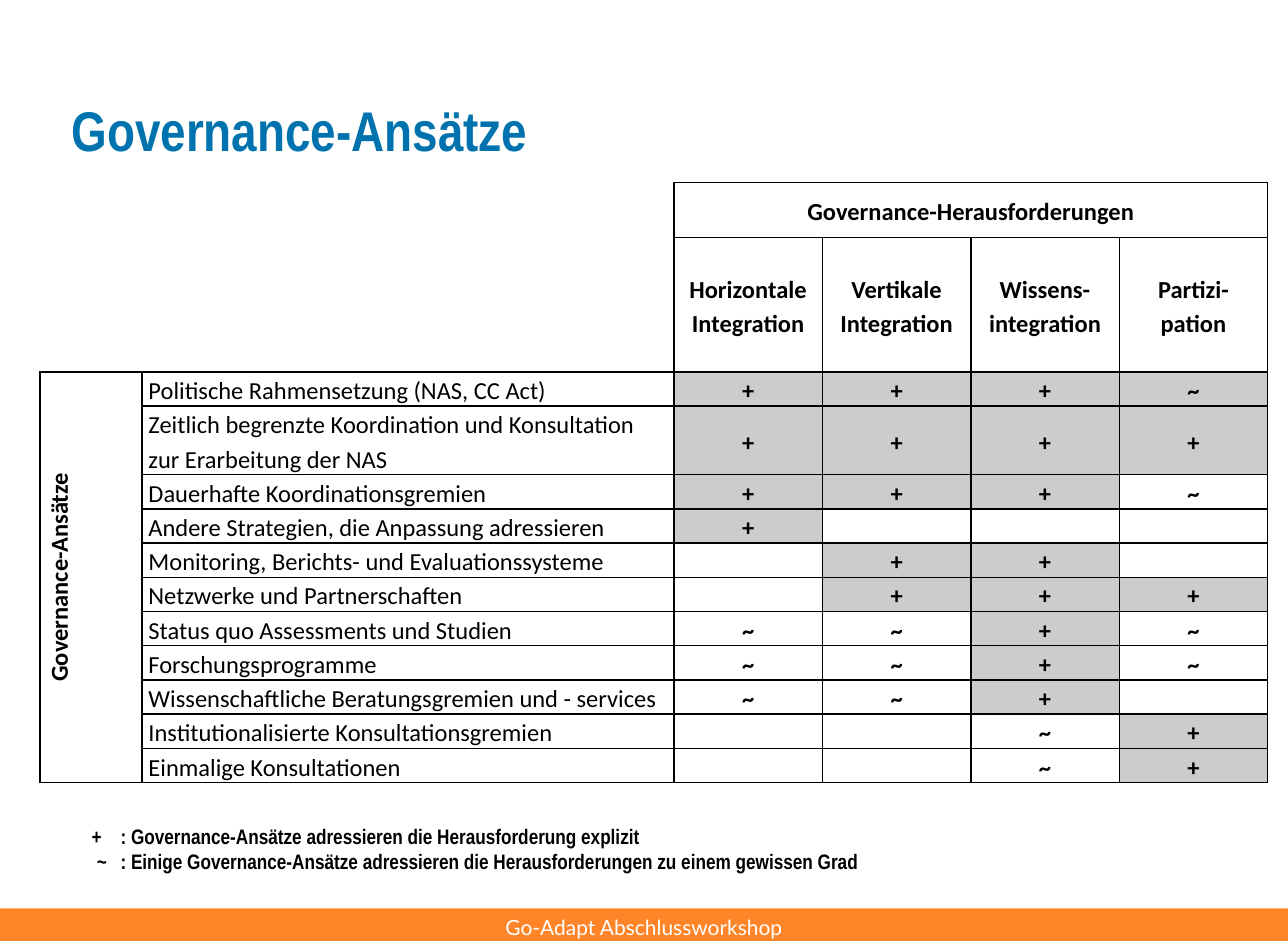
from dataclasses import dataclass

from lxml import etree
from pptx import Presentation
from pptx import util as u
from pptx.dml.color import RGBColor
from pptx.enum import shapes, text
from pptx.oxml import ns


@dataclass(frozen=True)
class Theme:
    blue: str = "0073AF"
    orange: str = "FF8528"
    grey: str = "CCCCCC"
    black: str = "000000"
    white: str = "FFFFFF"
    heading_font: str = "Arial Narrow"
    table_font: str = "Calibri"
    footer_font: str = "Lato"
    title_size: int = 32
    table_size: int = 14
    small_size: int = 12
    line_spacing: float = 1.15


CENTER, LEFT = text.PP_ALIGN.CENTER, text.PP_ALIGN.LEFT
MIDDLE, TOP = text.MSO_ANCHOR.MIDDLE, text.MSO_ANCHOR.TOP

CHALLENGES = ["Horizontale\nIntegration", "Vertikale\nIntegration",
              "Wissens- integration", "Partizi-pation"]
# One mark per challenge; a dot leaves the cell empty.
APPROACHES = [
    ("Politische Rahmensetzung (NAS, CC Act)", "+++~"),
    ("Zeitlich begrenzte Koordination und Konsultation zur Erarbeitung der NAS", "++++"),
    ("Dauerhafte Koordinationsgremien", "+++~"),
    ("Andere Strategien, die Anpassung adressieren", "+..."),
    ("Monitoring, Berichts- und Evaluationssysteme", ".++."),
    ("Netzwerke und Partnerschaften", ".+++"),
    ("Status quo Assessments und Studien", "~~+~"),
    ("Forschungsprogramme", "~~+~"),
    ("Wissenschaftliche Beratungsgremien und - services", "~~+."),
    ("Institutionalisierte Konsultationsgremien", "..~+"),
    ("Einmalige Konsultationen", "..~+"),
]
LEGEND = [
    ("+\t: Governance-Ansätze adressieren die Herausforderung explizit", 0),
    ("~\t: Einige Governance-Ansätze adressieren die Herausforderungen "
     "zu einem gewissen Grad", 3),
]
LEGEND_TAB = 16.5
HEADER_ROWS, LABEL_COLUMNS = 2, 2
COLUMN_WIDTHS = [58.4, 304.4] + [85] * len(CHALLENGES)
HEADER_HEIGHTS, LINE_HEIGHT = [31.5, 77], 19.6


def write(para, content, *, font, size, color, bold=False, align=LEFT, spacing=None):
    para.alignment = align
    if spacing:
        para.line_spacing = spacing
    if not content:
        # The end mark keeps an empty cell as low as a filled one.
        end = etree.SubElement(para._p, ns.qn("a:endParaRPr"))
        end.set("sz", str(size * 100))
        return
    span = para.add_run()
    span.text = content
    span.font.name, span.font.size, span.font.bold = font, u.Pt(size), bold
    span.font.color.rgb = RGBColor.from_string(color)


def draw_borders(cell, sides, color):
    properties = cell._tc.get_or_add_tcPr()
    for side in "LRTB":
        line = etree.SubElement(properties, ns.qn(f"a:ln{side}"), w=str(u.Pt(1)))
        if side in sides:
            fill = etree.SubElement(line, ns.qn("a:solidFill"))
            etree.SubElement(fill, ns.qn("a:srgbClr"), val=color)
        else:
            etree.SubElement(line, ns.qn("a:noFill"))


class SlideBuilder:
    def __init__(self, page, theme):
        self.page, self.theme = page, theme

    def text_box(self, left, top, width, height, anchor=TOP):
        box = self.page.shapes.add_textbox(*map(u.Pt, (left, top, width, height)))
        box.text_frame.word_wrap = True
        box.text_frame.vertical_anchor = anchor
        return box.text_frame

    def title(self, content):
        frame = self.text_box(33.8, 36.7, 663, 74.2, MIDDLE)
        write(frame.paragraphs[0], content, font=self.theme.heading_font,
              size=self.theme.title_size, color=self.theme.blue, bold=True)

    def footer(self, content):
        bar = self.page.shapes.add_shape(
            shapes.MSO_SHAPE.RECTANGLE, 0, u.Pt(520), u.Pt(737.3), u.Pt(21.6))
        bar.shadow.inherit = False
        bar.fill.solid()
        bar.fill.fore_color.rgb = RGBColor.from_string(self.theme.orange)
        bar.line.fill.background()
        write(bar.text_frame.paragraphs[0], content, font=self.theme.footer_font,
              size=self.theme.small_size, color=self.theme.white, align=CENTER)

    def legend(self, entries):
        frame = self.text_box(45.4, 468, 617.8, 70)
        for index, (content, inset) in enumerate(entries):
            para = frame.add_paragraph() if index else frame.paragraphs[0]
            layout = para._p.get_or_add_pPr()
            layout.set("marL", str(u.Pt(LEGEND_TAB)))
            layout.set("indent", str(u.Pt(inset - LEGEND_TAB)))
            write(para, content, font=self.theme.heading_font,
                  size=self.theme.small_size, color=self.theme.black, bold=True)

    def cell(self, cell, content, *, sides, bold=True, align=CENTER, anchor=MIDDLE):
        cell.margin_left = cell.margin_right = u.Pt(3.6)
        cell.margin_top = cell.margin_bottom = 0
        cell.vertical_anchor = anchor
        draw_borders(cell, sides, self.theme.black)
        if content == "+":
            cell.fill.solid()
            cell.fill.fore_color.rgb = RGBColor.from_string(self.theme.grey)
        else:
            cell.fill.background()
        frame = cell.text_frame
        for index, line in enumerate(content.split("\n")):
            para = frame.add_paragraph() if index else frame.paragraphs[0]
            write(para, line, font=self.theme.table_font, size=self.theme.table_size,
                  color=self.theme.black, bold=bold, align=align,
                  spacing=self.theme.line_spacing)

    def matrix(self, left, top):
        heights = HEADER_HEIGHTS + [LINE_HEIGHT * (2 if len(label) > 60 else 1)
                                    for label, _ in APPROACHES]
        table = self.page.shapes.add_table(
            len(heights), len(COLUMN_WIDTHS), u.Pt(left), u.Pt(top),
            u.Pt(sum(COLUMN_WIDTHS)), u.Pt(sum(heights))).table
        table.first_row = table.horz_banding = False
        for column, width in zip(table.columns, COLUMN_WIDTHS):
            column.width = u.Pt(width)
        for row, height in zip(table.rows, heights):
            row.height = u.Pt(height)

        contents = [["", "", "Governance-Herausforderungen", "", "", ""],
                    ["", "", *CHALLENGES]]
        contents += [["", label, *marks.replace(".", " ")] for label, marks in APPROACHES]
        contents[HEADER_ROWS][0] = "Governance-Ansätze"
        for r, row in enumerate(contents):
            for c, content in enumerate(row):
                corner = r < HEADER_ROWS and c < LABEL_COLUMNS
                label = r >= HEADER_ROWS and c == 1
                self.cell(table.cell(r, c), content.strip(),
                          sides="RB" if corner else "LRTB", bold=not label,
                          align=LEFT if label else CENTER,
                          anchor=TOP if c < LABEL_COLUMNS else MIDDLE)

        # The "~" of the policy framework is shaded like the rest of its row.
        framework = table.cell(HEADER_ROWS, len(COLUMN_WIDTHS) - 1)
        framework.fill.solid()
        framework.fill.fore_color.rgb = RGBColor.from_string(self.theme.grey)

        side_heading = table.cell(HEADER_ROWS, 0)
        side_heading._tc.get_or_add_tcPr().set("vert", "vert270")
        side_heading.merge(table.cell(len(heights) - 1, 0))
        table.cell(0, 0).merge(table.cell(HEADER_ROWS - 1, LABEL_COLUMNS - 1))
        table.cell(0, LABEL_COLUMNS).merge(table.cell(0, len(COLUMN_WIDTHS) - 1))


def main():
    deck = Presentation()
    deck.slide_width, deck.slide_height = u.Pt(737.3), u.Pt(538.6)
    builder = SlideBuilder(deck.slides.add_slide(deck.slide_layouts[6]), Theme())
    builder.footer("Go-Adapt Abschlussworkshop")
    builder.title("Governance-Ansätze")
    builder.matrix(23, 104.4)
    builder.legend(LEGEND)
    deck.save("out.pptx")


if __name__ == "__main__":
    main()
